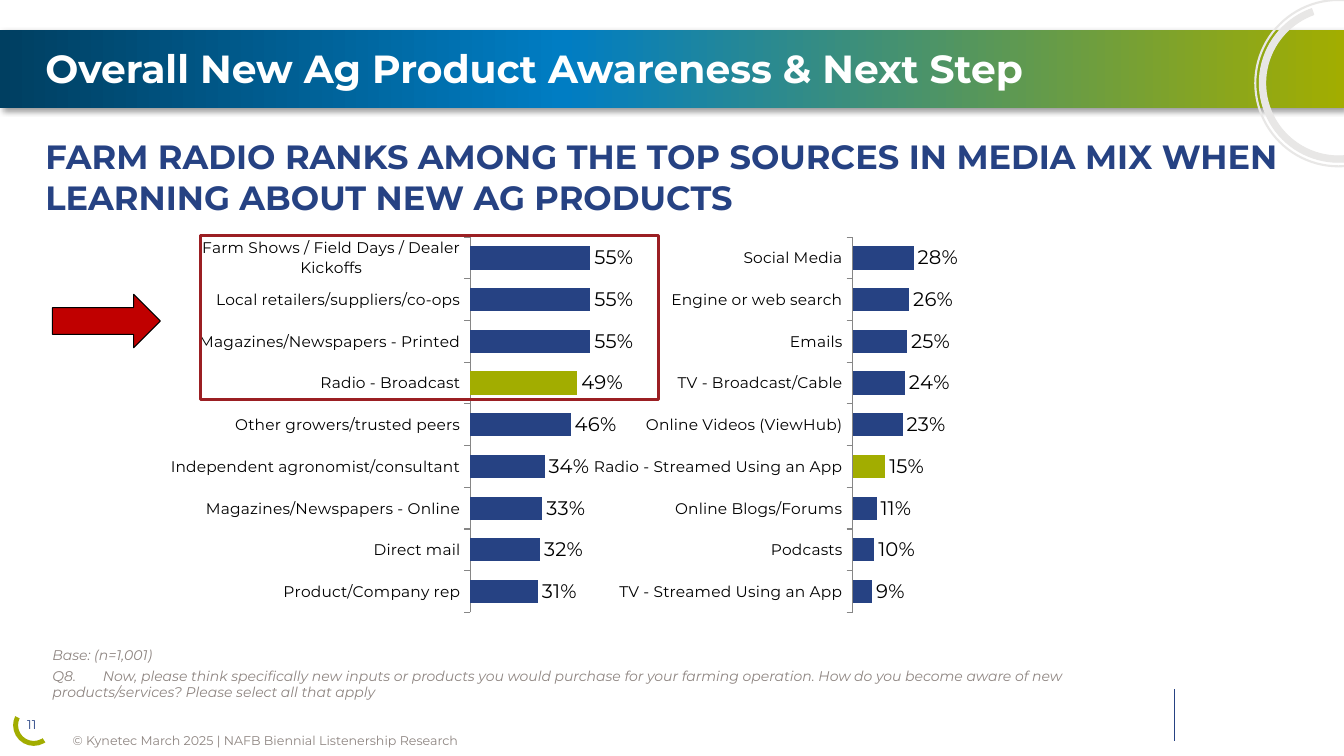
from copy import deepcopy
from dataclasses import dataclass

from lxml import etree
from pptx import Presentation
from pptx import util as u
from pptx.chart.data import CategoryChartData
from pptx.dml.color import RGBColor
from pptx.enum import chart as charts, shapes, text
from pptx.oxml import parse_xml
from pptx.oxml.ns import nsdecls, qn

FONT = "Montserrat"
NAVY, GREEN, GREY, BLACK, WHITE = "264283", "A2AD00", "8E8581", "000000", "FFFFFF"
RING = "E8E7E6"


@dataclass
class Ranking:
    left: float
    sources: dict[str, float]
    radio: int


@dataclass
class Figure:
    preset: shapes.MSO_SHAPE
    at: tuple[float, float, float, float]
    fill: str | None = None
    line: str | None = None
    weight: float = 0.75
    adjustments: tuple[float, ...] = ()
    rotation: float = 0


RANKINGS = [
    Ranking(1.68, {
        "Farm Shows / Field Days / Dealer Kickoffs": 0.55,
        "Local retailers/suppliers/co-ops": 0.55,
        "Magazines/Newspapers - Printed": 0.55,
        "Radio - Broadcast": 0.49,
        "Other growers/trusted peers": 0.46,
        "Independent agronomist/consultant": 0.34,
        "Magazines/Newspapers - Online": 0.33,
        "Direct mail": 0.32,
        "Product/Company rep": 0.31,
    }, radio=3),
    Ranking(5.47, {
        "Social Media": 0.28,
        "Engine or web search": 0.26,
        "Emails": 0.25,
        "TV - Broadcast/Cable": 0.24,
        "Online Videos (ViewHub)": 0.23,
        "Radio - Streamed Using an App": 0.15,
        "Online Blogs/Forums": 0.11,
        "Podcasts": 0.1,
        "TV - Streamed Using an App": 0.09,
    }, radio=5),
]

PAGE_ARC = Figure(shapes.MSO_SHAPE.BLOCK_ARC, (0.13, 6.99, 0.41, 0.41), GREEN,
                  adjustments=(33.45, 123.65, 0.12))
CORNER_RINGS = [
    Figure(shapes.MSO_SHAPE.OVAL, (12.45, 0, 1.65, 1.65), line=RING, weight=1.5),
    Figure(shapes.MSO_SHAPE.BLOCK_ARC, (12.49, 0.04, 1.57, 1.57), RING, RING,
           adjustments=(204.51, 96.09, 0.04), rotation=90),
]
HIGHLIGHTS = [
    Figure(shapes.MSO_SHAPE.RIGHT_ARROW, (0.52, 2.92, 1.07, 0.53), "C00000", BLACK),
    Figure(shapes.MSO_SHAPE.RECTANGLE, (1.99, 2.34, 4.54, 1.62), line="9B1F23", weight=2.25),
]


def color(value: str) -> RGBColor:
    return RGBColor.from_string(value)


def inches(at: tuple[float, ...]) -> list[u.Inches]:
    return [u.Inches(length) for length in at]


def style_font(font, size: float, ink: str, bold: bool = False, italic: bool = False) -> None:
    font.name, font.size, font.bold, font.italic = FONT, u.Pt(size), bold, italic
    font.color.rgb = color(ink)


def draw_figure(slide, figure: Figure):
    drawn = slide.shapes.add_shape(figure.preset, *inches(figure.at))
    drawn.shadow.inherit = False
    drawn.rotation = figure.rotation
    for index, adjustment in enumerate(figure.adjustments):
        drawn.adjustments[index] = adjustment
    if figure.fill:
        drawn.fill.solid()
        drawn.fill.fore_color.rgb = color(figure.fill)
    else:
        drawn.fill.background()
    if figure.line:
        drawn.line.color.rgb = color(figure.line)
        drawn.line.width = u.Pt(figure.weight)
    else:
        drawn.line.fill.background()
    return drawn


def write(holder, at: tuple[float, float, float, float], lines: list[str], size: float, ink: str,
          bold: bool = False, italic: bool = False, align=text.PP_ALIGN.LEFT,
          anchor=text.MSO_ANCHOR.MIDDLE, wrap: bool = True, layout: str = "") -> None:
    holder.left, holder.top, holder.width, holder.height = inches(at)
    frame = holder.text_frame
    frame.auto_size = text.MSO_AUTO_SIZE.NONE
    frame.word_wrap = wrap
    frame.vertical_anchor = anchor
    frame.margin_left = frame.margin_right = frame.margin_top = frame.margin_bottom = 0
    frame.text = "\n".join(lines)
    for index, paragraph in enumerate(frame.paragraphs):
        paragraph.alignment = align
        paragraph.space_before = u.Pt(3 if index else 0)
        if layout:
            properties = paragraph._p.get_or_add_pPr()
            properties.set("marL", "0")
            properties.set("indent", "0")
            properties.append(parse_xml(layout))
        style_font(paragraph.font, size, ink, bold, italic)


def new_text_box(slide):
    return slide.shapes.add_textbox(0, 0, 0, 0)


def draw_band(slide) -> None:
    band = draw_figure(slide, Figure(shapes.MSO_SHAPE.RECTANGLE, (-0.01, 0.3, 13.34, 0.77)))
    band.fill.gradient()
    band.fill.gradient_angle = 0
    stops = band._element.spPr.find(".//" + qn("a:gsLst"))
    stops.append(deepcopy(stops[-1]))
    for stop, position, shade in zip(band.fill.gradient_stops, (0, 0.42, 1),
                                     ("003F61", "007DC3", GREEN)):
        stop.position = position
        stop.color.rgb = color(shade)
    effects = band._element.spPr.find(qn("a:effectLst"))
    effects.append(parse_xml(
        f'<a:outerShdw {nsdecls("a")} blurRad="50800" dist="38100" dir="2700000" algn="tl" '
        'rotWithShape="0"><a:srgbClr val="000000"><a:alpha val="40000"/></a:srgbClr>'
        '</a:outerShdw>'))
    slide.shapes._spTree.insert(2, band._element)


def draw_ranking(slide, ranking: Ranking) -> None:
    data = CategoryChartData(number_format="0%")
    data.categories = list(ranking.sources)
    data.add_series("Series 1", list(ranking.sources.values()))
    chart = slide.shapes.add_chart(charts.XL_CHART_TYPE.BAR_CLUSTERED,
                                   *inches((ranking.left, 2.05, 5.15, 4.33)), data).chart
    chart.has_legend = chart.has_title = False
    style_font(chart.font, 18, BLACK)

    source_axis = chart.category_axis
    source_axis.reverse_order = True
    source_axis.major_tick_mark = charts.XL_TICK_MARK.OUTSIDE
    source_axis.format.line.color.rgb = color("868686")
    style_font(source_axis.tick_labels.font, 11, BLACK)

    share_axis = chart.value_axis
    share_axis.minimum_scale, share_axis.maximum_scale, share_axis.major_unit = 0, 1, 0.1
    share_axis.has_major_gridlines = False
    share_axis.visible = False

    plot = chart.plots[0]
    plot.gap_width = 80
    plot.vary_by_categories = False
    bars = plot.series[0]
    for bar, shade in ((bars, NAVY), (bars.points[ranking.radio], GREEN)):
        bar.format.fill.solid()
        bar.format.fill.fore_color.rgb = color(shade)
    labels = bars.data_labels
    labels.show_value = True
    labels.number_format, labels.number_format_is_linked = "0%", False
    labels.position = charts.XL_LABEL_POSITION.OUTSIDE_END
    style_font(labels.font, 14, BLACK)

    plot_area = chart._chartSpace.chart.plotArea
    for default_layout in plot_area.findall(qn("c:layout")):
        plot_area.remove(default_layout)
    places = "".join(f'<c:{name} val="{value}"/>' for name, value in (
        ("layoutTarget", "inner"), ("xMode", "edge"), ("yMode", "edge"),
        ("x", 0.58), ("y", 0.07), ("w", 0.42), ("h", 0.86)))
    plot_area.insert(0, parse_xml(
        f'<c:layout {nsdecls("c")}><c:manualLayout>{places}</c:manualLayout></c:layout>'))


def main() -> None:
    deck = Presentation()
    deck.slide_width, deck.slide_height = u.Inches(13.33), u.Inches(7.5)
    slide = deck.slides.add_slide(deck.slide_layouts[1])
    headline, message = slide.placeholders

    draw_band(slide)
    write(headline, (0.45, 0.28, 11.34, 0.79),
          ["Overall New Ag Product Awareness & Next Step"], 28, WHITE, bold=True)
    write(message, (0.45, 1.59, 12.37, 0.32),
          ["FARM RADIO RANKS AMONG THE TOP SOURCES IN MEDIA MIX WHEN LEARNING ABOUT "
           "NEW AG PRODUCTS"], 24, NAVY, bold=True, layout=f'<a:buNone {nsdecls("a")}/>')

    divider = slide.shapes.add_connector(shapes.MSO_CONNECTOR.STRAIGHT,
                                         *inches((11.65, 6.84, 11.65, 7.35)))
    divider.line.color.rgb = color(NAVY)
    divider.line.width = u.Pt(0.75)
    etree.SubElement(divider._element.spPr, qn("a:effectLst"))

    draw_figure(slide, PAGE_ARC)
    write(new_text_box(slide), (0.12, 6.99, 0.39, 0.39), ["11"], 9, NAVY,
          align=text.PP_ALIGN.CENTER, wrap=False)
    write(new_text_box(slide), (0.72, 7.25, 9.21, 0.19),
          ["© Kynetec March 2025 | NAFB Biennial Listenership Research"], 9, GREY)
    tab = f'<a:tab pos="{u.Inches(0.32)}" algn="l"/>'
    write(new_text_box(slide), (0.52, 6.41, 10.3, 0.55),
          ["Base: (n=1,001)",
           "Q8.\tNow, please think specifically new inputs or products you would purchase for "
           "your farming operation. How do you become aware of new products/services? "
           "Please select all that apply"], 10, GREY, italic=True, anchor=text.MSO_ANCHOR.TOP,
          layout=f'<a:tabLst {nsdecls("a")}>{tab}</a:tabLst>')

    for ranking in RANKINGS:
        draw_ranking(slide, ranking)
    for figure in CORNER_RINGS + HIGHLIGHTS:
        draw_figure(slide, figure)
    deck.save("out.pptx")


if __name__ == "__main__":
    main()
